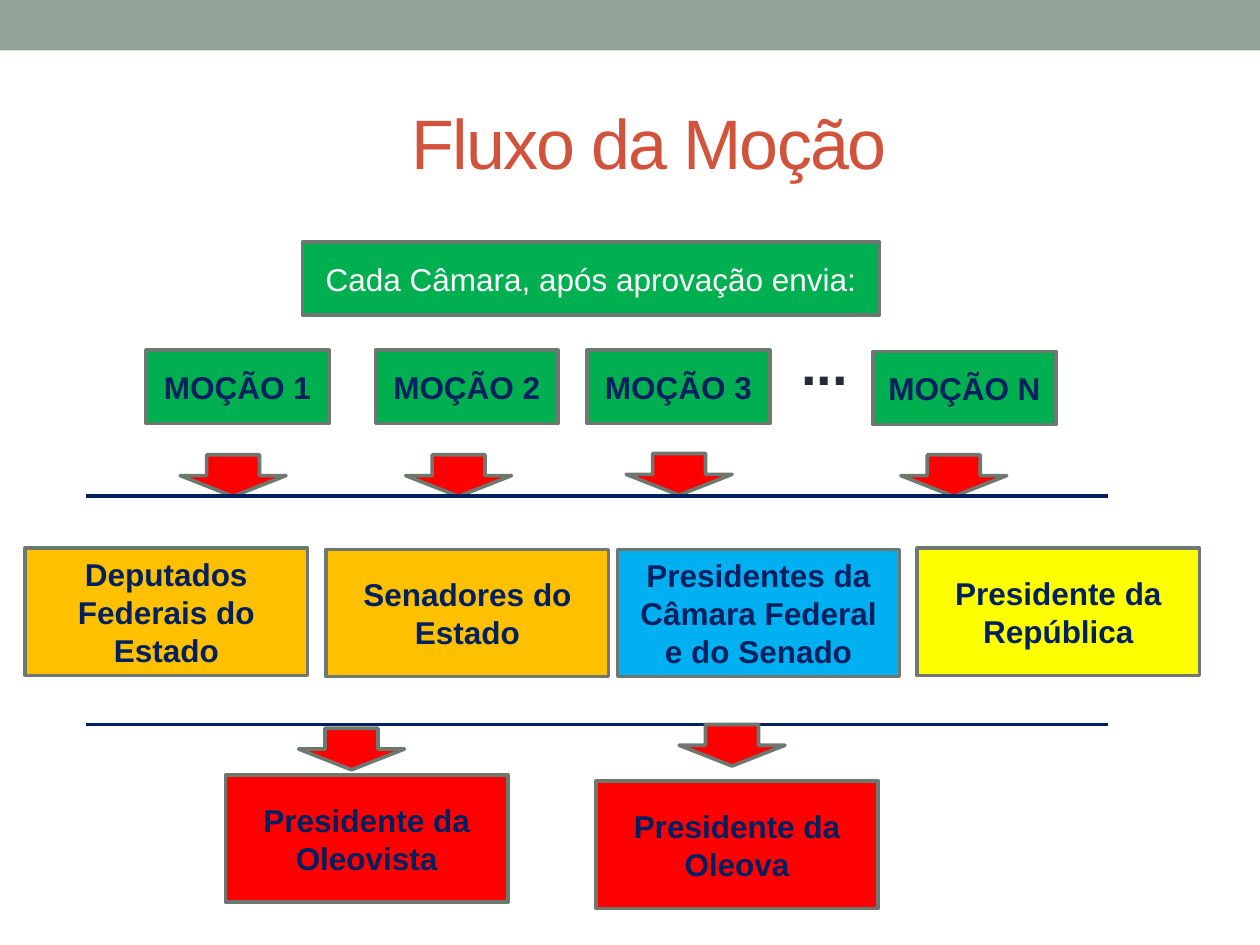
from lxml.etree import SubElement
from pptx import Presentation
from pptx.dml.color import RGBColor
from pptx.enum.shapes import MSO_CONNECTOR as Connector, MSO_SHAPE as Shape
from pptx.enum.text import MSO_ANCHOR as Anchor, PP_ALIGN as Align
from pptx.oxml.ns import qn
from pptx.util import Inches, Pt

# Content: label, left, top and fill of each box
TITLE = "Fluxo da Moção"
HEADING = "Cada Câmara, após aprovação envia:"
MOTIONS = [
    ("MOÇÃO 1", 1.16, 2.78, "green"),
    ("MOÇÃO 2", 2.98, 2.78, "green"),
    ("MOÇÃO 3", 4.66, 2.78, "green"),
    ("MOÇÃO N", 6.93, 2.79, "green"),
]
RECIPIENTS = [
    ("Deputados Federais do Estado", 0.2, 4.35, "orange"),
    ("Senadores do Estado", 2.59, 4.36, "orange"),
    ("Presidentes da Câmara Federal e do Senado", 4.9, 4.36, "blue"),
    ("Presidente da República", 7.28, 4.35, "yellow"),
    ("Presidente da Oleovista", 1.79, 6.15, "red"),
    ("Presidente da Oleova", 4.73, 6.2, "red"),
]
MOTION_ARROWS = [(1.43, 3.61), (3.22, 3.61), (4.97, 3.6), (7.15, 3.61)]
RECIPIENT_ARROWS = [(2.37, 5.78), (5.39, 5.75)]

# Format
FONT = "Arial"
COLORS = {
    "band": "93A299", "title": "D2533C", "navy": "002060", "outline": "6D7871",
    "green": "00B050", "orange": "FFC000", "blue": "00B0F0", "yellow": "FFFF00",
    "red": "FF0000", "white": "FFFFFF", "dark": "292934",
}
SLIDE_WIDTH, SLIDE_HEIGHT = 10, 7.5
MOTION_SIZE = (1.45, 0.58)
RECIPIENT_SIZE = (2.24, 1.01)
ARROW_SIZE = (0.84, 0.33)
RULE_LEFT, RULE_RIGHT = 0.68, 8.79


def color(name):
    return RGBColor.from_string(COLORS[name])


def write(shape, text, size=18, fill="navy", bold=False, align=Align.CENTER,
          anchor=Anchor.MIDDLE, spacing=None):
    frame = shape.text_frame
    frame.word_wrap = True
    frame.vertical_anchor = anchor
    paragraph = frame.paragraphs[0]
    paragraph.alignment = align
    run = paragraph.add_run()
    run.text = text
    font = run.font
    font.name, font.size, font.bold = FONT, Pt(size), bold
    font.color.rgb = color(fill)
    if spacing is not None:
        run._r.get_or_add_rPr().set("spc", str(spacing * 100))


def add_shape(slide, kind, left, top, size, fill, outline="outline"):
    shape = slide.shapes.add_shape(kind, *map(Inches, (left, top, *size)))
    shape.shadow.inherit = False
    shape.fill.solid()
    shape.fill.fore_color.rgb = color(fill)
    if outline:
        shape.line.color.rgb = color(outline)
        shape.line.width = Pt(2.08)
    else:
        shape.line.fill.background()
    return shape


def add_boxes(slide, boxes, size):
    for text, left, top, fill in boxes:
        box = add_shape(slide, Shape.FLOWCHART_PROCESS, left, top, size, fill)
        write(box, text, bold=True)


def add_arrows(slide, positions):
    for left, top in positions:
        add_shape(slide, Shape.DOWN_ARROW, left, top, ARROW_SIZE, "red")


def add_rule(slide, top):
    rule = slide.shapes.add_connector(
        Connector.STRAIGHT, *map(Inches, (RULE_LEFT, top, RULE_RIGHT, top)))
    rule.line.color.rgb = color("navy")
    rule.line.width = Pt(2.25)
    SubElement(rule._element.spPr, qn("a:effectLst"))


def main():
    presentation = Presentation()
    presentation.slide_width = Inches(SLIDE_WIDTH)
    presentation.slide_height = Inches(SLIDE_HEIGHT)
    slide = presentation.slides.add_slide(presentation.slide_layouts[5])

    # Top band and title
    add_shape(slide, Shape.RECTANGLE, 0, 0, (SLIDE_WIDTH, 0.4), "band", outline=None)
    title = slide.shapes.title
    title.left, title.top, title.width, title.height = map(Inches, (0.5, 0.58, 9.3, 1.08))
    write(title, TITLE, size=40, fill="title", spacing=-1)

    # Heading and motions
    heading = add_shape(slide, Shape.FLOWCHART_PROCESS, 2.4, 1.92, (4.58, 0.58), "green")
    write(heading, HEADING, fill="white")
    add_boxes(slide, MOTIONS, MOTION_SIZE)
    dots = slide.shapes.add_textbox(*map(Inches, (6.26, 2.57, 0.67, 0.64)))
    write(dots, "...", size=32, fill="dark", bold=True, align=Align.LEFT, anchor=Anchor.TOP)

    # Flow down to the recipients
    add_arrows(slide, MOTION_ARROWS)
    add_rule(slide, 3.94)
    add_rule(slide, 5.75)
    add_boxes(slide, RECIPIENTS, RECIPIENT_SIZE)
    add_arrows(slide, RECIPIENT_ARROWS)

    presentation.save("out.pptx")


if __name__ == "__main__":
    main()
